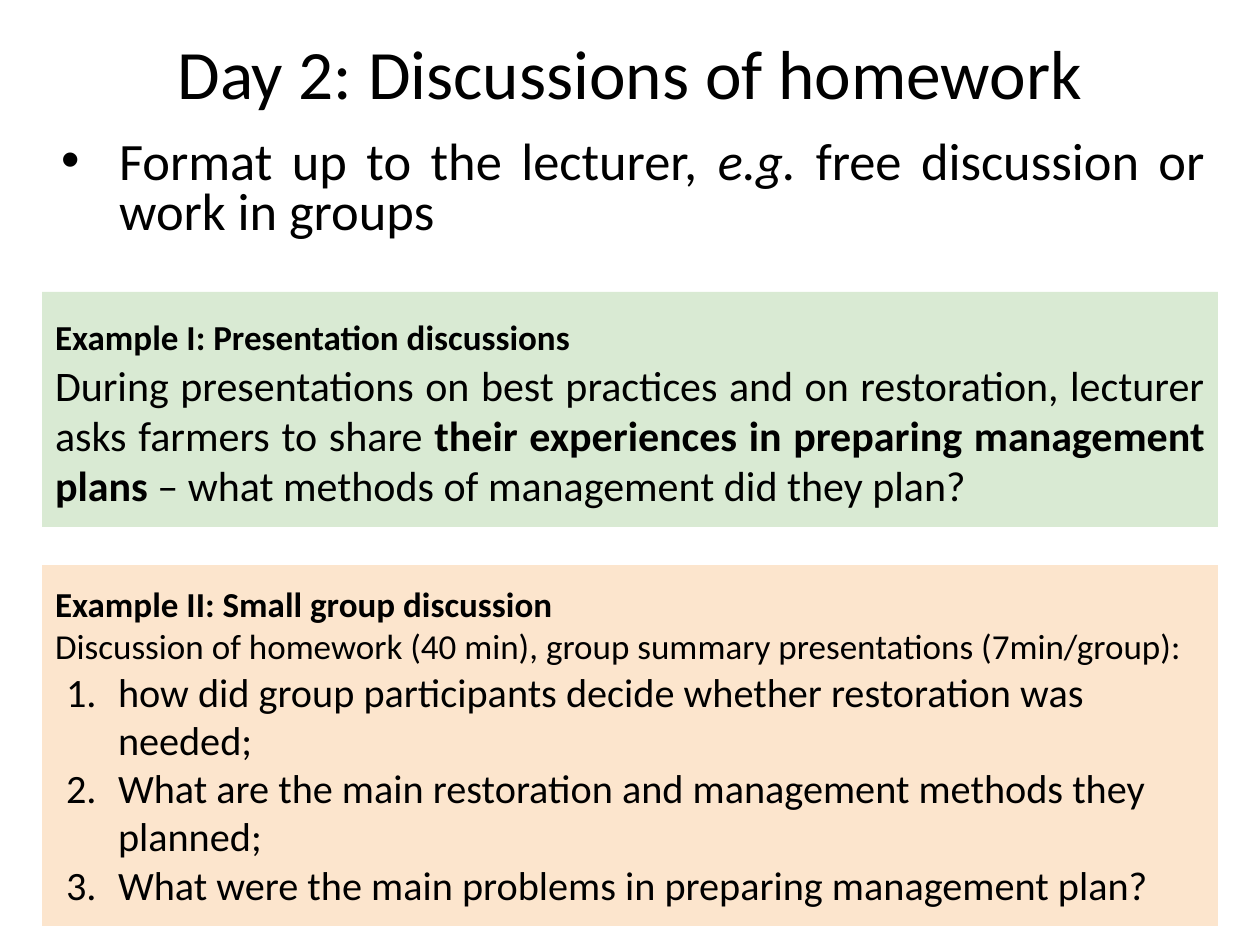
"""Build the slide on discussing homework, with two example panels."""
from dataclasses import dataclass

from lxml.etree import SubElement
from pptx import Presentation
from pptx.dml.color import RGBColor
from pptx.enum.shapes import MSO_SHAPE
from pptx.enum.text import MSO_ANCHOR, MSO_AUTO_SIZE, PP_ALIGN
from pptx.oxml.ns import qn
from pptx.util import Pt

TITLE = "Day 2: Discussions of homework"
FORMAT_RUNS = [
    ("Format up to the lecturer, ", {}),
    ("e.g. ", {"italic": True}),
    ("free discussion or work in groups", {}),
]
PRESENTATION_HEADING = "Example I: Presentation discussions"
PRESENTATION_RUNS = [
    ("During presentations on best practices and on restoration, lecturer asks farmers to share ", {}),
    ("their experiences in preparing management plans", {"bold": True}),
    (" – what methods of management did they plan?", {}),
]
GROUP_HEADING = "Example II: Small group discussion"
GROUP_INTRO = "Discussion of homework (40 min), group summary presentations (7min/group):"
GROUP_QUESTIONS = [
    "how did group participants decide whether restoration was needed;",
    "What are the main restoration and management methods they planned;",
    "What were the main problems in preparing management plan?",
]


@dataclass(frozen=True)
class Theme:
    font: str = "Calibri"
    text: str = "000000"
    green: str = "D9EAD3"
    orange: str = "FCE5CD"
    title_size: float = 39.6
    format_size: int = 30
    body_size: int = 24
    question_size: int = 23
    heading_size: int = 20


THEME = Theme()
SLIDE_SIZE = (1260, 945)
TITLE_BOX = (63, 38, 1134, 67)
FORMAT_BOX = (43, 134, 1175, 158)
PANEL_LEFT, PANEL_WIDTH = 42, 1176
PRESENTATION_TOP, PRESENTATION_HEIGHT = 292, 235
GROUP_TOP, GROUP_HEIGHT = 565, 361
SIDE_INSET, PANEL_INSET = 13, 13
TEXT_INDENT, BULLET_HANG, NUMBER_HANG = 63, 58, 52


def px(value):
    return round(value * 914400 / 126)


def place(shape, box):
    shape.left, shape.top, shape.width, shape.height = map(px, box)


def prepare_frame(frame, vertical_inset, anchor):
    frame.word_wrap = True
    frame.auto_size = MSO_AUTO_SIZE.NONE
    frame.vertical_anchor = anchor
    frame.margin_left = frame.margin_right = px(SIDE_INSET)
    frame.margin_top = frame.margin_bottom = px(vertical_inset)


def write_run(paragraph, text, size, bold=False, italic=False):
    run = paragraph.add_run()
    run.text = text
    font = run.font
    font.name, font.size, font.bold, font.italic = THEME.font, Pt(size), bold, italic
    font.color.rgb = RGBColor.from_string(THEME.text)


def next_paragraph(frame, align=PP_ALIGN.LEFT):
    first = frame.paragraphs[0]
    paragraph = frame.add_paragraph() if first.runs else first
    paragraph.alignment = align
    return paragraph


def set_marker(paragraph, hang, tag, **attributes):
    properties = paragraph._p.get_or_add_pPr()
    properties.set("marL", str(px(TEXT_INDENT)))
    properties.set("indent", str(-px(hang)))
    color = SubElement(properties, qn("a:buClr"))
    SubElement(color, qn("a:srgbClr"), val=THEME.text)
    if tag == "a:buChar":
        SubElement(properties, qn("a:buFont"), typeface="Arial")
    SubElement(properties, qn(tag), **attributes)


def add_panel(slide, top, height, fill):
    panel = slide.shapes.add_shape(
        MSO_SHAPE.RECTANGLE, *map(px, (PANEL_LEFT, top, PANEL_WIDTH, height)))
    panel.shadow.inherit = False
    panel.fill.solid()
    panel.fill.fore_color.rgb = RGBColor.from_string(fill)
    panel.line.fill.background()
    prepare_frame(panel.text_frame, PANEL_INSET, MSO_ANCHOR.MIDDLE)
    return panel.text_frame


def main():
    presentation = Presentation()
    presentation.slide_width, presentation.slide_height = map(px, SLIDE_SIZE)
    slide = presentation.slides.add_slide(presentation.slide_layouts[5])

    title = slide.shapes.title
    place(title, TITLE_BOX)
    prepare_frame(title.text_frame, 6, MSO_ANCHOR.MIDDLE)
    write_run(next_paragraph(title.text_frame, PP_ALIGN.CENTER), TITLE, THEME.title_size)

    format_frame = slide.shapes.add_textbox(*map(px, FORMAT_BOX)).text_frame
    prepare_frame(format_frame, 6, MSO_ANCHOR.TOP)
    paragraph = next_paragraph(format_frame, PP_ALIGN.JUSTIFY)
    paragraph.line_spacing = 0.8
    set_marker(paragraph, BULLET_HANG, "a:buChar", char="•")
    for text, style in FORMAT_RUNS:
        write_run(paragraph, text, THEME.format_size, **style)

    frame = add_panel(slide, PRESENTATION_TOP, PRESENTATION_HEIGHT, THEME.green)
    heading = next_paragraph(frame)
    write_run(heading, PRESENTATION_HEADING, THEME.heading_size, bold=True)
    write_run(heading, " ", THEME.body_size, bold=True)
    paragraph = next_paragraph(frame, PP_ALIGN.JUSTIFY)
    for text, style in PRESENTATION_RUNS:
        write_run(paragraph, text, THEME.body_size, **style)

    frame = add_panel(slide, GROUP_TOP, GROUP_HEIGHT, THEME.orange)
    write_run(next_paragraph(frame, PP_ALIGN.JUSTIFY), GROUP_HEADING, THEME.heading_size, bold=True)
    write_run(next_paragraph(frame), GROUP_INTRO, THEME.heading_size)
    for question in GROUP_QUESTIONS:
        paragraph = next_paragraph(frame)
        set_marker(paragraph, NUMBER_HANG, "a:buAutoNum", type="arabicPeriod")
        write_run(paragraph, question, THEME.question_size)

    presentation.save("out.pptx")


if __name__ == "__main__":
    main()
